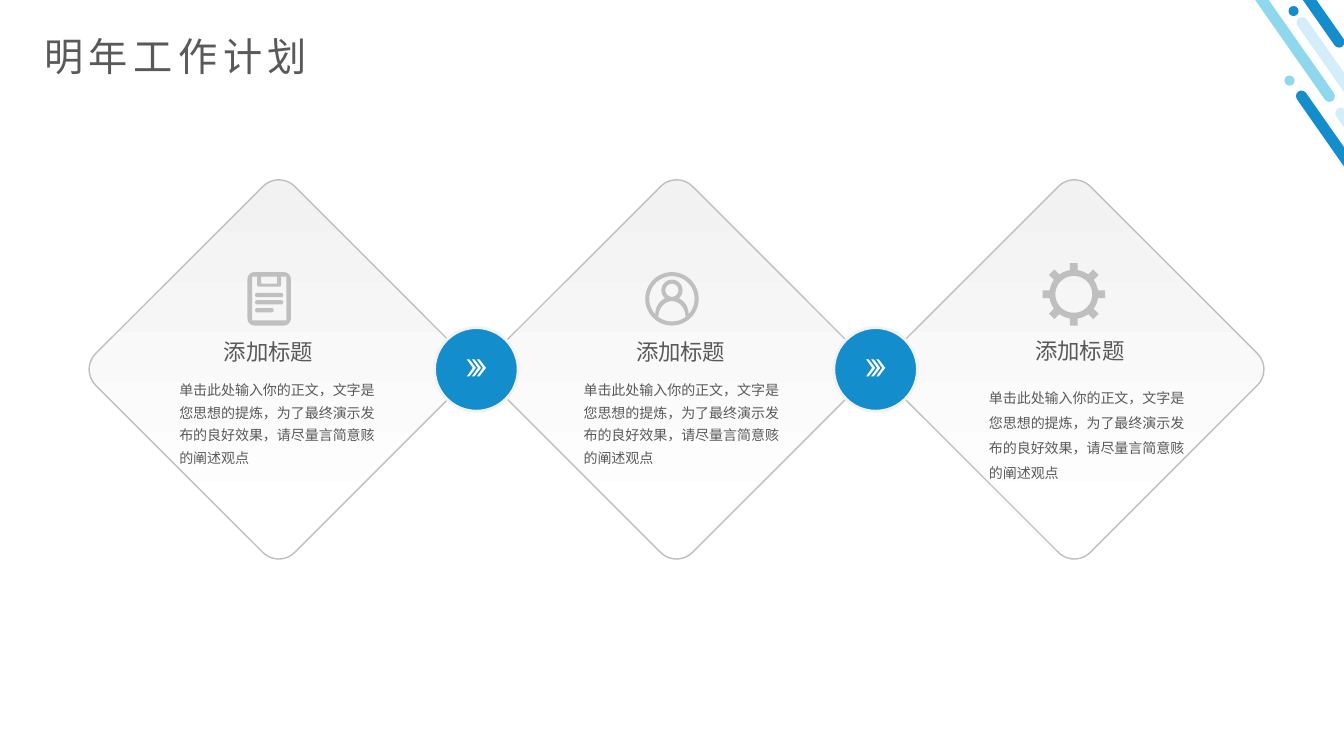
from math import cos, sin, radians
from lxml.etree import SubElement
from pptx import Presentation
from pptx.dml.color import RGBColor
from pptx.enum.shapes import MSO_SHAPE as Preset
from pptx.enum.text import MSO_AUTO_SIZE as Fit
from pptx.oxml.ns import qn
from pptx.util import Inches, Pt

# Content
TITLE = "明年工作计划"
HEADING = "添加标题"
BODY = "单击此处输入你的正文，文字是您思想的提炼，为了最终演示发布的良好效果，请尽量言简意赅的阐述观点"

THEME = {
    "font": "Noto Sans CJK SC", "text": "595959", "title": 28, "heading": 16, "body": 10,
    "blue": "138DCC", "sky": "8FD7ED", "pale": "D3EEF9", "white": "FFFFFF",
    "grey": "BFBFBF", "light": "F2F2F2",
}

# Cards: heading left and top, body left, top and height
CARDS = [
    {"heading": (2.12, 3.31), "body": (1.68, 3.68, 1.06)},
    {"heading": (6.21, 3.31), "body": (5.69, 3.68, 1.06)},
    {"heading": (10.17, 3.3), "body": (9.71, 3.73, 1.1)},
]
CARD_SIDE, CARD_LEFT, CARD_TOP, CARD_STEP = 2.79, 1.37, 2.27, 3.945
BADGE_SIZE, BADGE_LEFT, BADGE_TOP, BADGE_STEP = 0.83, 4.31, 3.25, 3.96

# Corner decoration: left, top, length, colour
BARS = [
    (13.45, 0.71, 2.19, "blue"), (13.84, 0.88, 2.19, "pale"), (12.37, -1.51, 2.76, "sky"),
    (13.62, -0.07, 2.76, "pale"), (12.63, -1.53, 2.19, "blue"),
]
DOTS = [(12.74, 0.75, "sky"), (12.78, 0.06, "blue")]


# Outlines, in hundredths of an inch around the icon centre
def arc(x, y, rx, ry, start, end, steps=32):
    angles = [radians(start + (end - start) * i / steps) for i in range(steps + 1)]
    return [(x + rx * cos(a), y + ry * sin(a)) for a in angles]


def circle(radius, y=0):
    return arc(0, y, radius, radius, 0, 360, 64)


def rounded(left, top, right, bottom, r):
    corners = [(right - r, bottom - r), (left + r, bottom - r),
               (left + r, top + r), (right - r, top + r)]
    return [point for i, (x, y) in enumerate(corners)
            for point in arc(x, y, r, r, 90 * i, 90 * i + 90, 8)]


def clipboard():
    page_hole = [(-17, -22), (-12, -22), (-12, -14), (-11.4, -12.6), (-10, -12),
                 (10, -12), (11.4, -12.6), (12, -14), (12, -22), (17, -22), (17, 21.5), (-17, 21.5)]
    clip_hole = [(-8, -22), (8, -22), (8, -15), (-8, -15)]
    lines = [rounded(-14, y - 2.1, right, y + 2.1, 2.1)
             for y, right in ((-3.8, 14), (3.5, 14), (11.3, 4.5))]
    return [rounded(-21.5, -26.5, 21.5, 26.5, 7), page_hole, clip_hole, *lines]


def person():
    around = (arc(0, 0, 22.5, 22.5, 137, 403) + arc(0, 15.3, 16.5, 17.5, 0, -65)
              + arc(0, -8.5, 10.5, 10.5, 50, -230) + arc(0, 15.3, 16.5, 17.5, -115, -180))
    shoulders = arc(0, 18.3, 13.5, 16, 180, 360) + arc(0, 0, 22.5, 22.5, 54, 126)
    return [circle(26.5), around, shoulders, circle(6.5, -8.5)]


def gear():
    rim = []
    for turn in range(0, 360, 45):
        c, s = cos(radians(turn)), sin(radians(turn))
        tooth = [(24, -3.8), (31, -3.8), (31, 3.8), (24, 3.8)]
        rim += [(x * c - y * s, x * s + y * c) for x, y in tooth]
        rim += arc(0, 0, 24.3, 24.3, turn + 9, turn + 36, 6)
    return [rim, circle(18.3)]


CHEVRON = [[(4.5, 0), (-2, 8.5), (-4.5, 8.5), (1.5, 0), (-4.5, -8.5), (-2, -8.5)]]
ICONS = [(2.67, 2.965, clipboard()), (6.665, 2.965, person()), (10.65, 2.92, gear())]


def color(name):
    return RGBColor.from_string(THEME[name])


def paint(shape, fill, line=None, width=1):
    shape.shadow.inherit = False
    if fill:
        shape.fill.solid()
        shape.fill.fore_color.rgb = color(fill)
    if line:
        shape.line.color.rgb = color(line)
        shape.line.width = Pt(width)
    else:
        shape.line.fill.background()


def add_preset(page, kind, left, top, width, height):
    return page.shapes.add_shape(kind, Inches(left), Inches(top), Inches(width), Inches(height))


def add_outline(page, x, y, contours, fill):
    places = [[(Inches(x + dx / 100), Inches(y + dy / 100)) for dx, dy in contour]
              for contour in contours]
    builder = page.shapes.build_freeform(*places[0][0])
    for i, points in enumerate(places):
        if i:
            builder.move_to(*points[0])
        builder.add_line_segments(points[1:], close=True)
    paint(builder.convert_to_shape(), fill)


def add_text(page, text, left, top, width, height, size, spacing=0, frame=None, para=None):
    box = page.shapes.add_textbox(Inches(left), Inches(top), Inches(width), Inches(height))
    for name, value in {"word_wrap": True, **(frame or {})}.items():
        setattr(box.text_frame, name, value)
    line = box.text_frame.paragraphs[0]
    for name, value in (para or {}).items():
        setattr(line, name, value)
    span = line.add_run()
    span.text = text
    for name, value in {"name": THEME["font"], "size": Pt(THEME[size])}.items():
        setattr(span.font, name, value)
    span.font.color.rgb = color("text")
    props = span.font._element
    SubElement(props, qn("a:ea")).set("typeface", THEME["font"])
    if spacing:
        props.set("spc", str(spacing * 100))


def add_card(page, left):
    card = add_preset(page, Preset.ROUNDED_RECTANGLE, left, CARD_TOP, CARD_SIDE, CARD_SIDE)
    card.rotation = 45
    card.adjustments[0] = 0.08
    card.fill.gradient()
    card.fill.gradient_angle = 315
    for stop, (place, name) in zip(card.fill.gradient_stops, ((0.03, "light"), (0.91, "white"))):
        stop.position = place
        stop.color.rgb = color(name)
    paint(card, None, "grey")


def main():
    deck = Presentation()
    deck.slide_width, deck.slide_height = Inches(13.33), Inches(7.5)
    page = deck.slides.add_slide(deck.slide_layouts[6])

    # Corner decoration
    for left, top, length, name in BARS:
        bar = add_preset(page, Preset.ROUNDED_RECTANGLE, left, top, 0.11, length)
        bar.rotation = 325
        bar.adjustments[0] = 0.5
        paint(bar, name)
    for left, top, name in DOTS:
        paint(add_preset(page, Preset.OVAL, left, top, 0.1, 0.1), name)

    # Title
    grow = {"auto_size": Fit.SHAPE_TO_FIT_TEXT}
    add_text(page, TITLE, 0.34, 0.27, 12.9, 0.57, "title", 4, grow)

    # Diamond cards, then the badges that join them
    for i in range(len(CARDS)):
        add_card(page, CARD_LEFT + i * CARD_STEP)
    for i in range(len(CARDS) - 1):
        left = BADGE_LEFT + i * BADGE_STEP
        badge = add_preset(page, Preset.OVAL, left, BADGE_TOP, BADGE_SIZE, BADGE_SIZE)
        paint(badge, "blue", "light", 2)
        for shift in (0.05, 0, -0.05):
            add_outline(page, left + BADGE_SIZE / 2 + shift, 3.65, CHEVRON, "white")

    # Card texts
    shrink = {"auto_size": Fit.TEXT_TO_FIT_SHAPE}
    loose = {"line_spacing": 1.5, "space_before": Pt(13.3)}
    for card in CARDS:
        left, top, height = card["body"]
        add_text(page, BODY, left, top, 2.17, height, "body", frame=shrink, para=loose)
        add_text(page, HEADING, *card["heading"], 1.09, 0.37, "heading", frame=grow)

    # Icons
    for x, y, contours in ICONS:
        add_outline(page, x, y, contours, "grey")

    deck.save("out.pptx")


if __name__ == "__main__":
    main()
